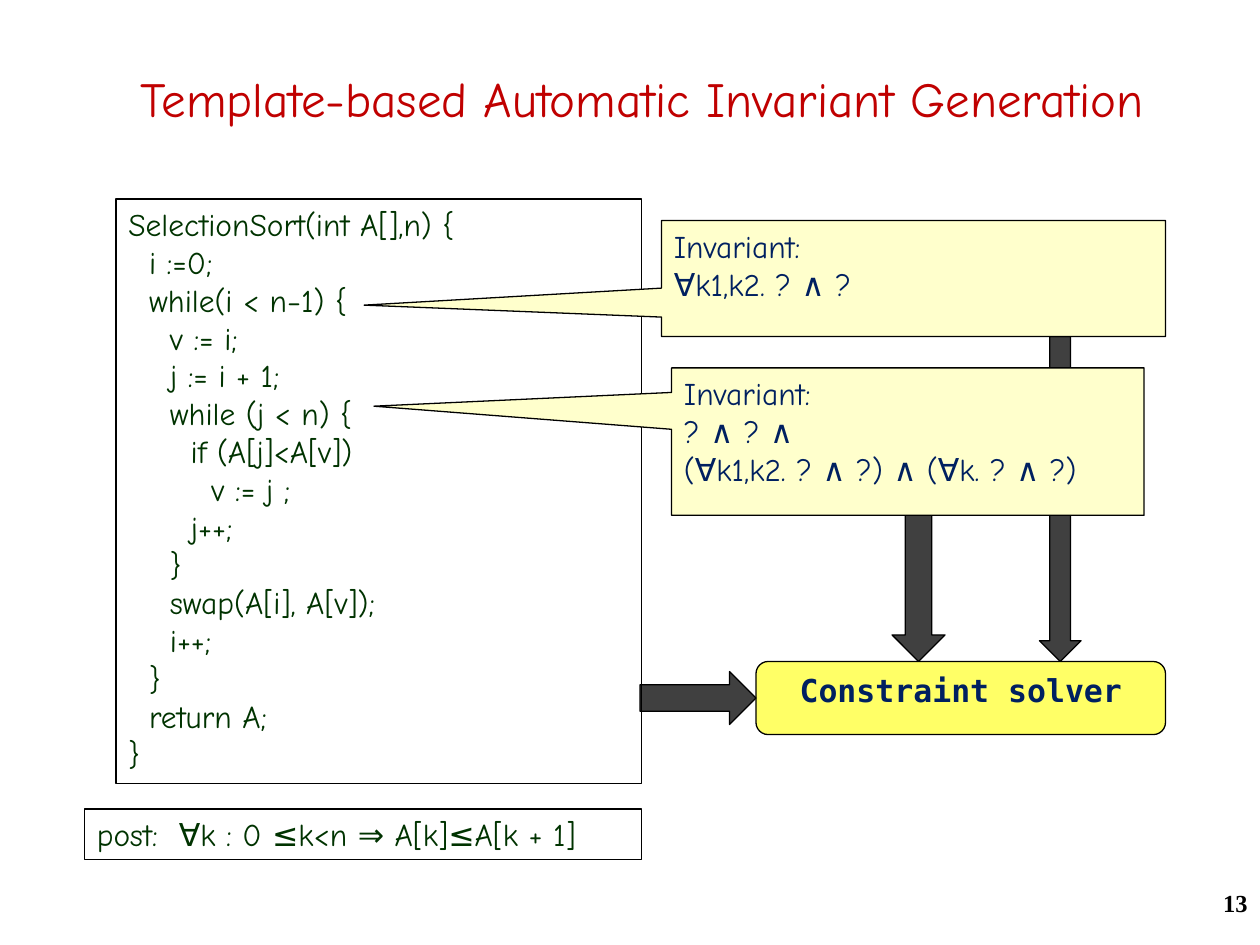
from dataclasses import dataclass

from pptx import Presentation
from pptx.dml.color import RGBColor
from pptx.enum import shapes, text
from pptx.util import Inches, Pt


@dataclass(frozen=True)
class Theme:
    hand: str = "Comic Neue"
    mono: str = "DejaVu Sans Mono"
    serif: str = "Times New Roman"
    title_size: int = 28
    body_size: int = 18
    number_size: int = 14
    red: str = "C00000"
    green: str = "003300"
    navy: str = "002060"
    black: str = "000000"
    gray: str = "404040"
    cream: str = "FFFFCC"
    yellow: str = "FFFF66"


THEME = Theme()
KIND = shapes.MSO_SHAPE
ALIGN = text.PP_ALIGN
INDENT_STEP = 0.165

# Each line of the program: nesting depth, statement
PROGRAM = [
    (0, "SelectionSort(int A[],n) {"),
    (1, "i :=0;"),
    (1, "while(i < n−1) {"),
    (2, "v := i;"),
    (2, "j := i + 1;"),
    (2, "while (j < n) {"),
    (3, "if (A[j]<A[v])"),
    (4, "v := j ;"),
    (3, "j++;"),
    (2, "}"),
    (2, "swap(A[i], A[v]);"),
    (2, "i++;"),
    (1, "}"),
    (1, "return A;"),
    (0, "}"),
]
POSTCONDITION = [(0, "post:  ∀k : 0 ≤k<n ⇒ A[k]≤A[k + 1]")]
OUTER_INVARIANT = [(0, "Invariant:"), (0, "∀k1,k2. ? ∧ ?")]
INNER_INVARIANT = [
    (0, "Invariant:"),
    (0, "? ∧ ? ∧"),
    (0, "(∀k1,k2. ? ∧ ?) ∧ (∀k. ? ∧ ?)"),
]


def write(frame, lines, color, size=THEME.body_size, font=THEME.hand,
          bold=False, align=ALIGN.LEFT, anchor=text.MSO_ANCHOR.TOP):
    """Fill a text frame with (depth, words) lines in one style."""
    frame.word_wrap = True
    frame.vertical_anchor = anchor
    for index, (depth, words) in enumerate(lines):
        para = frame.paragraphs[0] if index == 0 else frame.add_paragraph()
        para.text = words
        para.alignment = align
        para.font.name = font
        para.font.size = Pt(size)
        para.font.bold = bold
        para.font.color.rgb = RGBColor.from_string(color)
        if depth:
            para._p.get_or_add_pPr().set("marL", str(Inches(depth * INDENT_STEP)))


def add_block(page, kind, place, fill=None):
    block = page.shapes.add_shape(kind, *map(Inches, place))
    block.shadow.inherit = False
    block.line.color.rgb = RGBColor.from_string(THEME.black)
    block.line.width = Pt(0.75)
    if fill:
        block.fill.solid()
        block.fill.fore_color.rgb = RGBColor.from_string(fill)
    else:
        block.fill.background()
    return block


def add_arrow(page, place, rotation=0):
    arrow = add_block(page, KIND.DOWN_ARROW, place, THEME.gray)
    arrow.rotation = rotation


def add_code(page, place, lines):
    box = add_block(page, KIND.RECTANGLE, place)
    write(box.text_frame, lines, THEME.green)


def add_invariant(page, place, tip, lines):
    """Add a callout; tip is its pointer's offset from the centre, in box sizes."""
    callout = add_block(page, KIND.RECTANGULAR_CALLOUT, place, THEME.cream)
    callout.adjustments[0], callout.adjustments[1] = tip
    write(callout.text_frame, lines, THEME.navy)


def add_solver(page, place):
    solver = add_block(page, KIND.ROUNDED_RECTANGLE, place, THEME.yellow)
    write(solver.text_frame, [(0, "Constraint solver")], THEME.navy,
          font=THEME.mono, bold=True, align=ALIGN.CENTER)


def set_title(page, place, words):
    title = page.shapes.title
    title.left, title.top, title.width, title.height = map(Inches, place)
    write(title.text_frame, [(0, words)], THEME.red, THEME.title_size,
          align=ALIGN.CENTER, anchor=text.MSO_ANCHOR.MIDDLE)


def add_page_number(page, place, number):
    box = page.shapes.add_textbox(*map(Inches, place))
    write(box.text_frame, [(0, number)], THEME.black, THEME.number_size,
          THEME.serif, bold=True, align=ALIGN.RIGHT)


def main():
    deck = Presentation()
    deck.slide_width, deck.slide_height = Inches(10), Inches(7.5)
    page = deck.slides.add_slide(deck.slide_layouts.get_by_name("Title Only"))

    set_title(page, (0.19, 0.18, 9.81, 1.2),
              "Template-based Automatic Invariant Generation")
    add_arrow(page, (8.25, 2.67, 0.33, 2.58))
    add_solver(page, (6, 5.25, 3.25, 0.58))
    add_arrow(page, (7.08, 4.08, 0.42, 1.17))
    add_arrow(page, (5.33, 5.08, 0.42, 0.92), rotation=270)
    add_code(page, (0.92, 1.58, 4.17, 4.64), PROGRAM)
    add_code(page, (0.67, 6.42, 4.42, 0.4), POSTCONDITION)
    add_invariant(page, (5.25, 1.75, 4, 0.92), (-1.09, 0.23), OUTER_INVARIANT)
    add_invariant(page, (5.33, 2.92, 3.75, 1.17), (-1.13, -0.24), INNER_INVARIANT)
    add_page_number(page, (7.92, 7, 2.08, 0.5), "13")

    deck.save("out.pptx")


if __name__ == "__main__":
    main()
